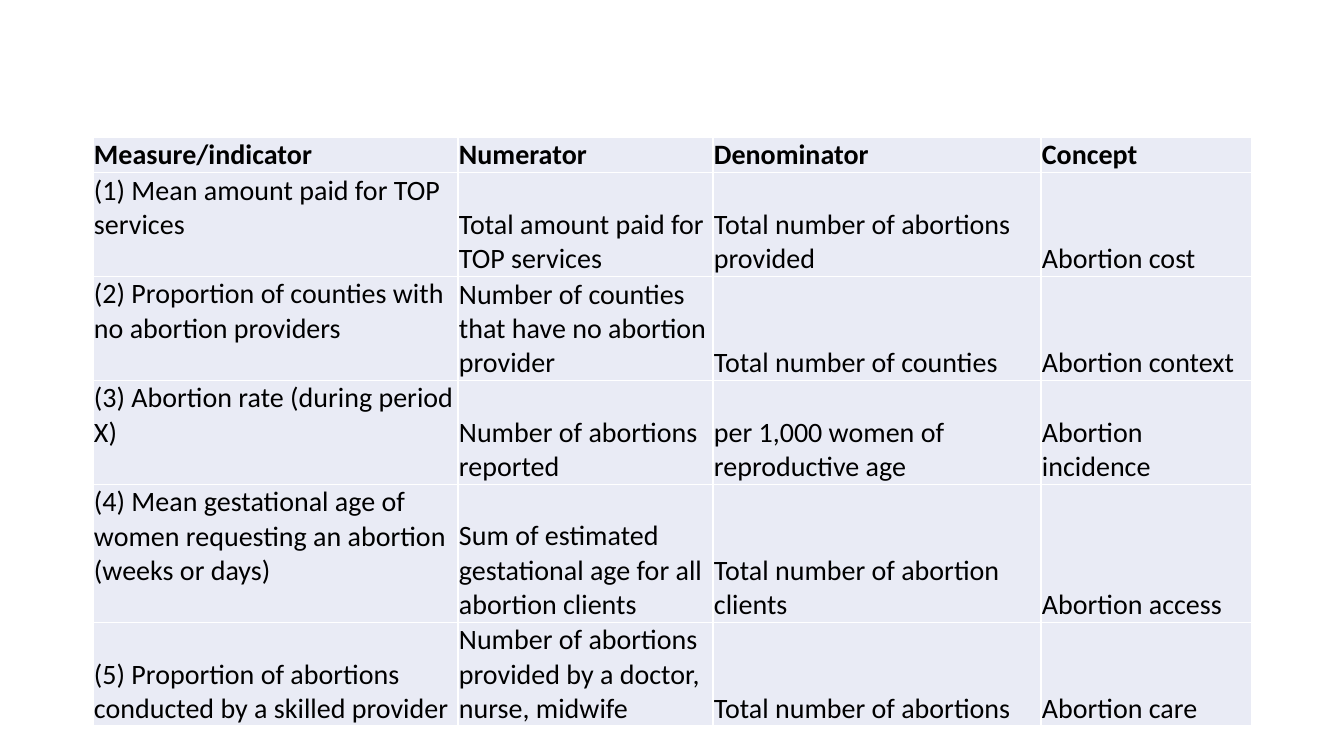
from lxml.etree import SubElement
from pptx import Presentation
from pptx.dml.color import RGBColor
from pptx.enum.text import MSO_ANCHOR
from pptx.oxml.ns import qn
from pptx.util import Emu, Pt

EMU_PER_PX = 914400 / 100.8
COLORS = {"cell": "E9EBF5", "border": "FFFFFF", "text": "000000"}
FONT_NAME = "Calibri"
FONT_SIZE = 20
TABLE_LEFT, TABLE_TOP = 93, 137
COLUMN_WIDTHS = [365, 255, 328, 211]
ROW_HEIGHTS = [34, 104, 103, 104, 138, 103]
TOP_ANCHORED_ROWS = range(1, 5)
INDICATORS = [
    ["Measure/indicator", "Numerator", "Denominator", "Concept"],
    ["(1) Mean amount paid for TOP services", "Total amount paid for TOP services",
     "Total number of abortions provided", "Abortion cost"],
    ["(2) Proportion of counties with no abortion providers",
     "Number of counties that have no abortion provider",
     "Total number of counties", "Abortion context"],
    ["(3) Abortion rate (during period X)", "Number of abortions reported",
     "per 1,000 women of reproductive age", "Abortion incidence"],
    ["(4) Mean gestational age of women requesting an abortion (weeks or days)",
     "Sum of estimated gestational age for all abortion clients",
     "Total number of abortion clients", "Abortion access"],
    ["(5) Proportion of abortions conducted by a skilled provider",
     "Number of abortions provided by a doctor, nurse, midwife",
     "Total number of abortions", "Abortion care"],
]


def px(length):
    return Emu(round(length * EMU_PER_PX))


def add_borders(cell):
    properties = cell._tc.get_or_add_tcPr()
    for position, side in enumerate(("lnL", "lnR", "lnT", "lnB")):
        line = SubElement(properties, qn(f"a:{side}"), w=str(Pt(1)))
        fill = SubElement(line, qn("a:solidFill"))
        SubElement(fill, qn("a:srgbClr"), val=COLORS["border"])
        properties.remove(line)
        properties.insert(position, line)


def format_cell(cell, text, bold, anchor):
    cell.fill.solid()
    cell.fill.fore_color.rgb = RGBColor.from_string(COLORS["cell"])
    add_borders(cell)
    cell.margin_left = cell.margin_right = cell.margin_top = px(1)
    cell.margin_bottom = 0
    cell.vertical_anchor = anchor
    cell.text_frame.text = text
    font = cell.text_frame.paragraphs[0].runs[0].font
    font.name = FONT_NAME
    font.size = Pt(FONT_SIZE)
    font.bold = bold
    font.color.rgb = RGBColor.from_string(COLORS["text"])


def add_indicator_table(slide):
    table = slide.shapes.add_table(
        len(ROW_HEIGHTS), len(COLUMN_WIDTHS), px(TABLE_LEFT), px(TABLE_TOP),
        px(sum(COLUMN_WIDTHS)), px(sum(ROW_HEIGHTS))).table
    table.first_row = table.horz_banding = False
    for column, width in zip(table.columns, COLUMN_WIDTHS):
        column.width = px(width)
    for row, height in zip(table.rows, ROW_HEIGHTS):
        row.height = px(height)
    for row_index, texts in enumerate(INDICATORS):
        for column_index, text in enumerate(texts):
            at_top = column_index == 0 and row_index in TOP_ANCHORED_ROWS
            anchor = MSO_ANCHOR.TOP if at_top else MSO_ANCHOR.BOTTOM
            format_cell(table.cell(row_index, column_index), text, row_index == 0, anchor)


def main():
    presentation = Presentation()
    presentation.slide_width = px(1344)
    presentation.slide_height = px(756)
    slide = presentation.slides.add_slide(presentation.slide_layouts[6])
    add_indicator_table(slide)
    presentation.save("out.pptx")


if __name__ == "__main__":
    main()
